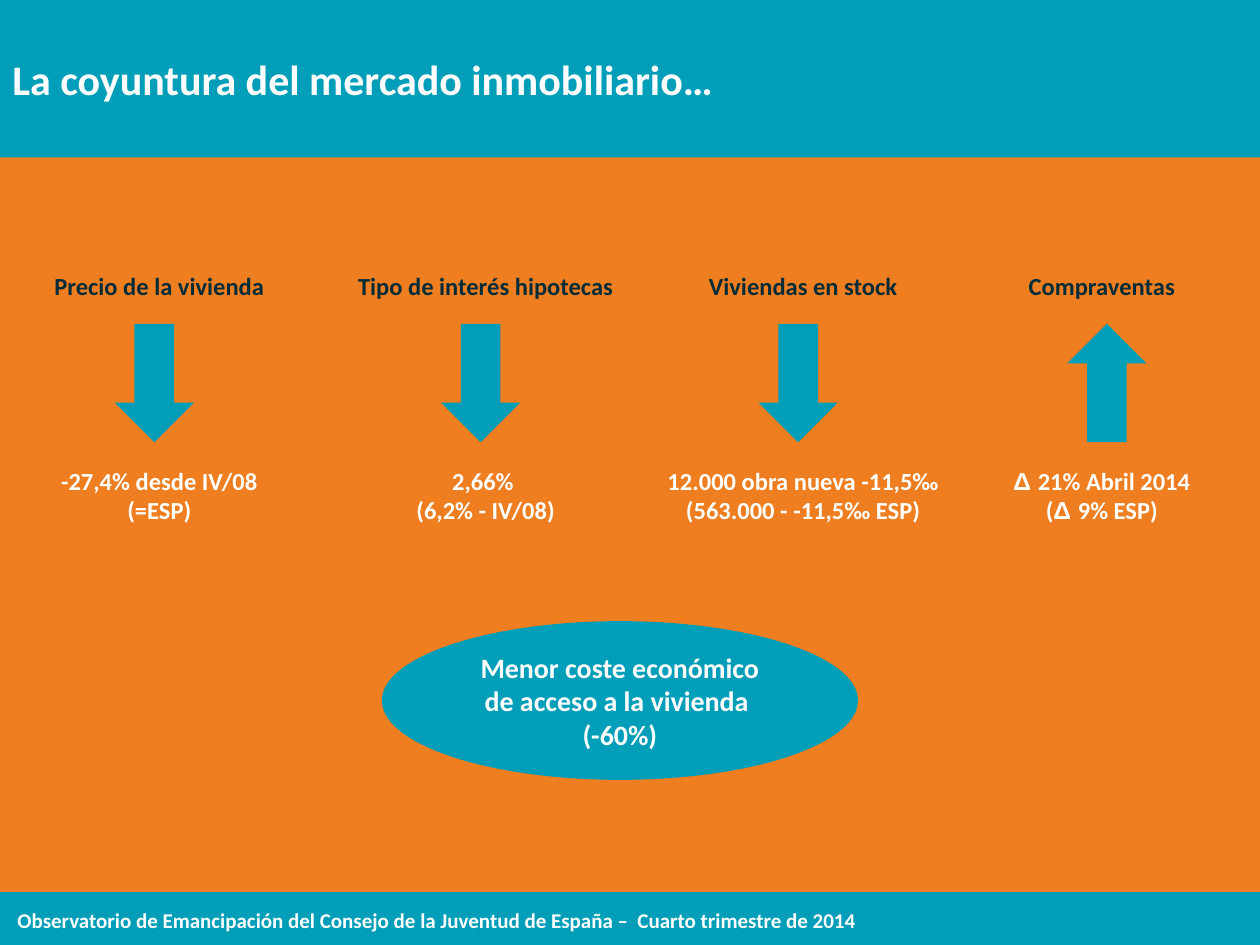
from pptx import Presentation
from pptx.dml.color import RGBColor
from pptx.enum.shapes import MSO_SHAPE as SHAPE
from pptx.enum.text import MSO_ANCHOR as ANCHOR, PP_ALIGN as ALIGN
from pptx.util import Inches, Pt

TEAL = RGBColor(0x00, 0x9E, 0xB8)
ORANGE = RGBColor(0xEE, 0x7E, 0x1F)
NAVY = RGBColor(0x00, 0x2C, 0x3A)
WHITE = RGBColor(0xFF, 0xFF, 0xFF)

BOX_W = 3.23
ARROW_W, ARROW_H = 0.63, 0.94
DELTA = "Δ "
INDICATORS = [
    (-0.35, 0.91, SHAPE.DOWN_ARROW, "Precio de la vivienda",
     ["-27,4% desde IV/08", "(=ESP)"]),
    (2.24, 3.5, SHAPE.DOWN_ARROW, "Tipo de interés hipotecas",
     ["2,66% ", "(6,2% - IV/08)"]),
    (4.76, 6.02, SHAPE.DOWN_ARROW, "Viviendas en stock",
     ["12.000 obra nueva -11,5‰", "(563.000 - -11,5‰ ESP)"]),
    (7.13, 8.47, SHAPE.UP_ARROW, "Compraventas",
     ["Δ 21% Abril 2014", "(Δ 9% ESP)"]),
]


class Deck:
    font = {"name": "Calibri", "bold": True}

    def __init__(self, width, height):
        self.prs = Presentation()
        self.prs.slide_width = Inches(width)
        self.prs.slide_height = Inches(height)
        self.s = self.prs.slides.add_slide(self.prs.slide_layouts[6])

    def background(self, color):
        fill = self.s.background.fill
        fill.solid()
        fill.fore_color.rgb = color

    def add_lines(self, sp, lines, size, color, align, anchor):
        tf = sp.text_frame
        tf.word_wrap = True
        tf.vertical_anchor = anchor
        for i, line in enumerate(lines):
            p = tf.add_paragraph() if i else tf.paragraphs[0]
            p.alignment = align
            for text in line.partition(DELTA):
                if text:
                    r = p.add_run()
                    r.text = text
                    style = {**self.font, "size": Pt(size)}
                    if text == DELTA:
                        style["name"] = "Arial"
                    for key, value in style.items():
                        setattr(r.font, key, value)
                    r.font.color.rgb = color

    def shape(self, kind, x, y, w, h, lines=(), size=14, align=ALIGN.CENTER):
        sp = self.s.shapes.add_shape(kind, Inches(x), Inches(y), Inches(w), Inches(h))
        sp.shadow.inherit = False
        sp.fill.solid()
        sp.fill.fore_color.rgb = TEAL
        sp.line.fill.background()
        self.add_lines(sp, lines, size, WHITE, align, ANCHOR.MIDDLE)

    def text(self, x, y, w, h, lines, size=14, color=WHITE, align=ALIGN.CENTER):
        sp = self.s.shapes.add_textbox(Inches(x), Inches(y), Inches(w), Inches(h))
        self.add_lines(sp, lines, size, color, align, ANCHOR.TOP)


def main():
    deck = Deck(10, 7.5)
    deck.background(ORANGE)
    deck.shape(SHAPE.RECTANGLE, 0, 7.08, 10, 0.42)
    deck.text(0.04, 7.15, 7.72, 0.3,
              ["Observatorio de Emancipación del Consejo de la Juventud de España –  "
               "Cuarto trimestre de 2014"], size=12, align=ALIGN.LEFT)
    deck.shape(SHAPE.RECTANGLE, 0, 0, 10, 1.25,
               ["La coyuntura del mercado inmobiliario…"], size=24, align=ALIGN.LEFT)
    for box_x, arrow_x, arrow, heading, values in INDICATORS:
        deck.shape(arrow, arrow_x, 2.57, ARROW_W, ARROW_H)
        deck.text(box_x, 2.1, BOX_W, 0.34, [heading], color=NAVY)
        deck.text(box_x, 3.65, BOX_W, 0.57, values)
    deck.shape(SHAPE.OVAL, 3.03, 4.93, 3.78, 1.26,
               ["Menor coste económico de acceso a la vivienda ", "(-60%)"], size=16)
    deck.prs.save("out.pptx")


if __name__ == "__main__":
    main()
